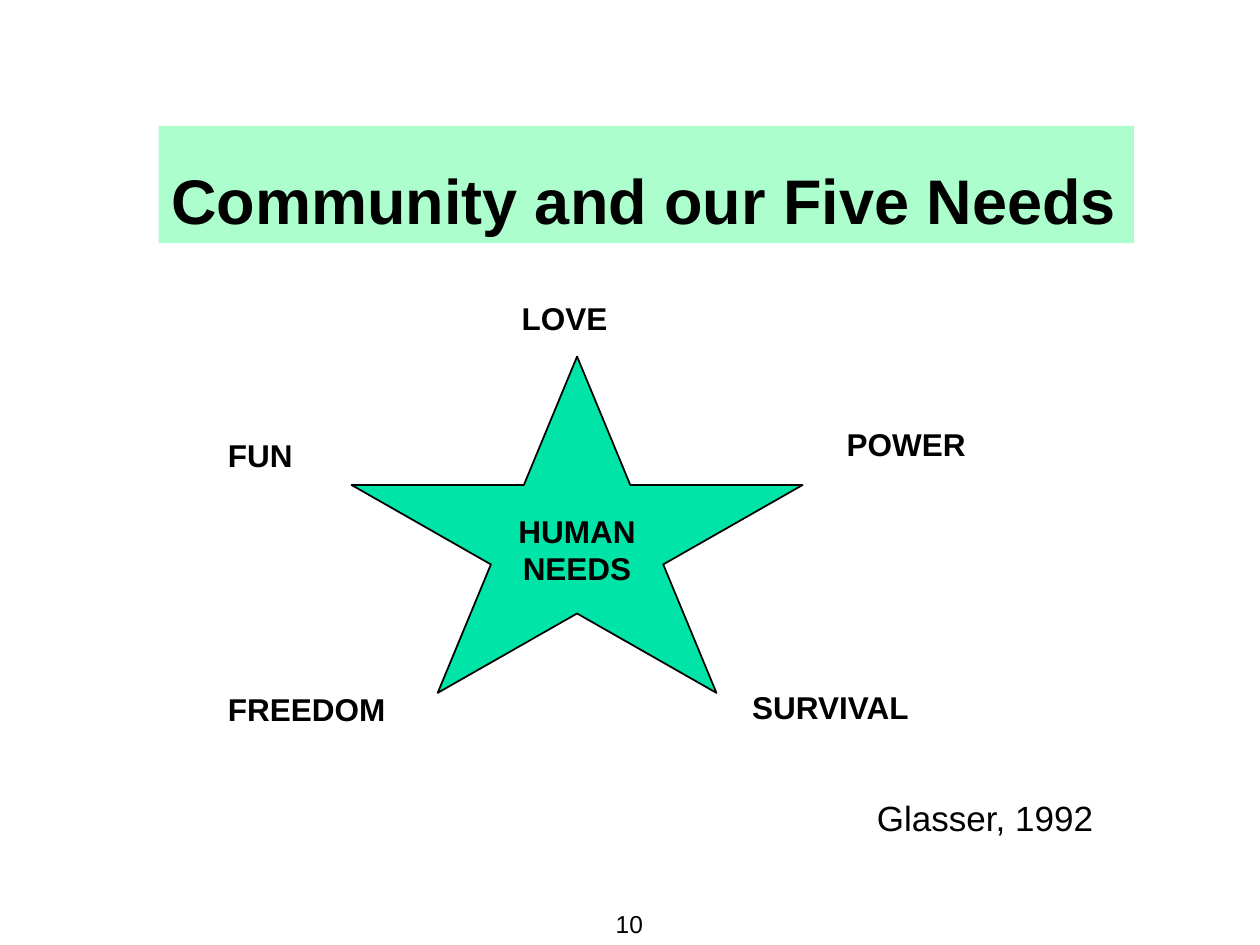
"""Build the slide on community and the five human needs."""
from typing import NamedTuple

from pptx import Presentation
from pptx.dml.color import RGBColor
from pptx.enum.shapes import MSO_SHAPE
from pptx.enum.text import MSO_ANCHOR, MSO_AUTO_SIZE, PP_ALIGN
from pptx.util import Inches, Pt

RECTANGLE, STAR = MSO_SHAPE.RECTANGLE, MSO_SHAPE.STAR_5_POINT
TOP, MIDDLE, BOTTOM = MSO_ANCHOR.TOP, MSO_ANCHOR.MIDDLE, MSO_ANCHOR.BOTTOM
LEFT, CENTER = PP_ALIGN.LEFT, PP_ALIGN.CENTER
FIT_SHAPE = MSO_AUTO_SIZE.SHAPE_TO_FIT_TEXT

BLACK = RGBColor(0x00, 0x00, 0x00)
MINT = RGBColor(0xAC, 0xFF, 0xCD)
GREEN = RGBColor(0x00, 0xE4, 0xA8)

COLUMNS, ROWS = 100, 75
CELL = Inches(0.1)
INSET = Inches(0.05)


class Area(NamedTuple):
    """Place and size in grid columns and rows."""
    column: float
    row: float
    columns: float
    rows: float

    def lengths(self) -> list[int]:
        """Return left, top, width and height as slide lengths."""
        return [round(cells * CELL) for cells in self]


class Label(NamedTuple):
    """Text with its area and format."""
    lines: tuple[str, ...]
    area: Area
    size: int = 18
    bold: bool = True
    align: PP_ALIGN = LEFT
    anchor: MSO_ANCHOR = TOP
    wrap: bool = False


class Figure(NamedTuple):
    """Filled preset shape with an optional outline."""
    kind: MSO_SHAPE
    area: Area
    fill: RGBColor
    outlined: bool


FIGURES = (
    Figure(RECTANGLE, Area(12.6, 10, 77.4, 9.3), MINT, False),
    Figure(STAR, Area(27.9, 28.3, 35.8, 26.7), GREEN, True),
)

LABELS = (
    Label(("Community and our Five Needs",), Area(13.1, 12.6, 76.4, 6.7),
          size=36, anchor=BOTTOM, wrap=True),
    Label(("LOVE",), Area(40.9, 23.2, 7.9, 3.8)),
    Label(("POWER",), Area(66.7, 33.2, 10.6, 3.8)),
    Label(("SURVIVAL",), Area(59.2, 54.1, 13.5, 3.8)),
    Label(("FREEDOM",), Area(17.6, 54.3, 13.6, 6.8)),
    Label(("FUN",), Area(17.6, 34.1, 6.3, 6.8)),
    Label(("HUMAN", "NEEDS"), Area(40.6, 40.2, 10.4, 6.8),
          align=CENTER, anchor=MIDDLE),
    Label(("Glasser, 1992",), Area(69.1, 62.7, 18.3, 4.1), size=20, bold=False),
    Label(("10",), Area(48.3, 71.8, 3.3, 3.2),
          size=14, bold=False, align=CENTER, anchor=BOTTOM),
)


def set_values(target: object, values: dict[str, object]) -> None:
    """Set each named attribute of the target."""
    for name, value in values.items():
        setattr(target, name, value)


def draw_figure(page, figure: Figure) -> None:
    """Draw a filled preset shape."""
    shape = page.shapes.add_shape(figure.kind, *figure.area.lengths())
    shape.shadow.inherit = False
    shape.fill.solid()
    shape.fill.fore_color.rgb = figure.fill
    if figure.outlined:
        shape.line.color.rgb = BLACK
        shape.line.width = Pt(1)
    else:
        shape.line.fill.background()


def draw_label(page, label: Label) -> None:
    """Draw a text box with one paragraph for each line."""
    box = page.shapes.add_textbox(*label.area.lengths())
    frame = box.text_frame
    margins = {f"margin_{side}": INSET for side in ("left", "top", "right", "bottom")}
    set_values(frame, {
        **margins,
        "word_wrap": label.wrap,
        "auto_size": FIT_SHAPE,
        "vertical_anchor": label.anchor,
        "text": "\n".join(label.lines),
    })
    for para in frame.paragraphs:
        para.alignment = label.align
        for span in para.runs:
            set_values(span.font, {
                "name": "Arial", "size": Pt(label.size), "bold": label.bold})
            span.font.color.rgb = BLACK


def main() -> None:
    """Build and save the deck."""
    deck = Presentation()
    set_values(deck, {"slide_width": COLUMNS * CELL, "slide_height": ROWS * CELL})
    page = deck.slides.add_slide(deck.slide_layouts[6])
    for figure in FIGURES:
        draw_figure(page, figure)
    for label in LABELS:
        draw_label(page, label)
    deck.save("out.pptx")


if __name__ == "__main__":
    main()
